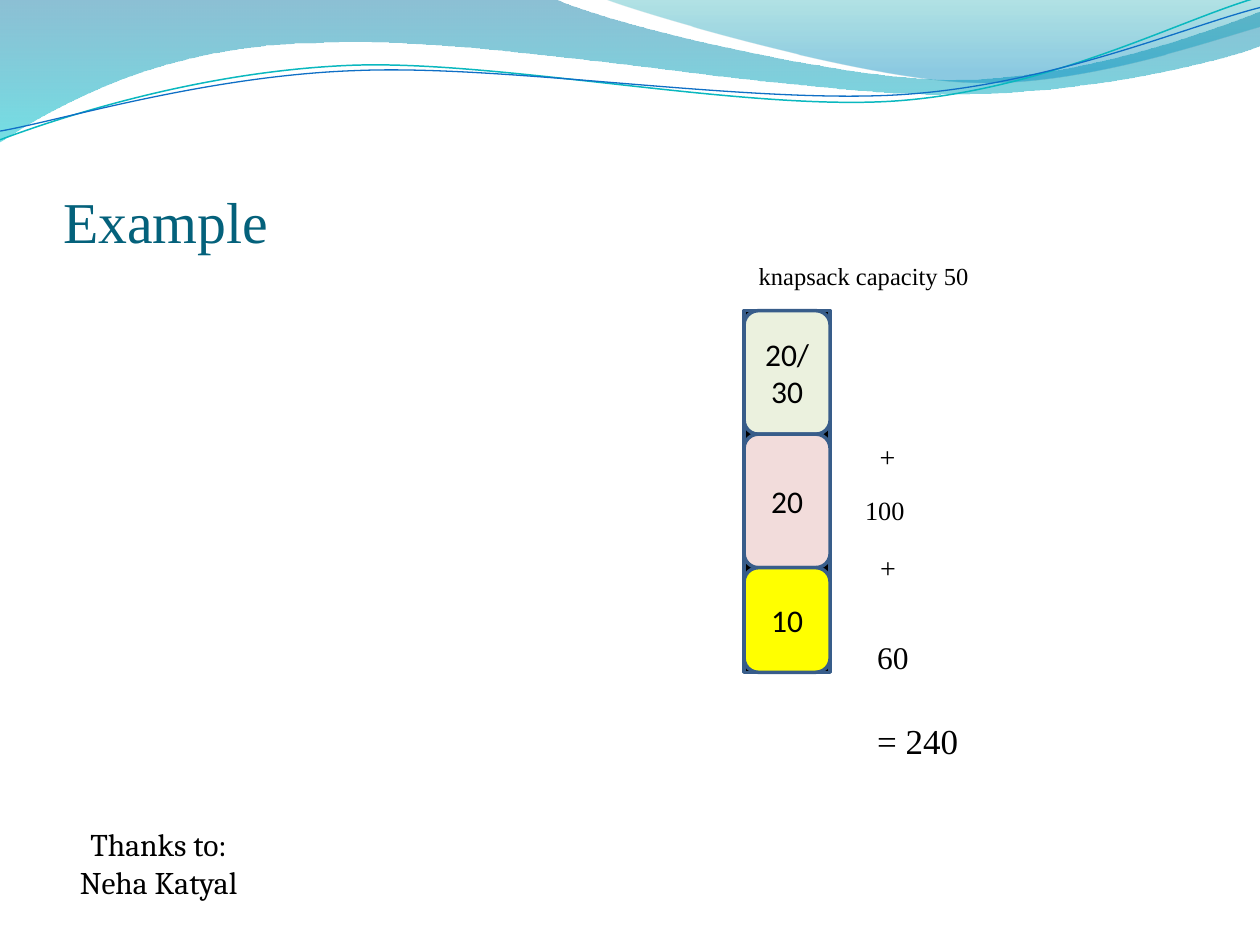
"""Build the fractional knapsack example slide."""
from dataclasses import dataclass

from lxml.etree import SubElement
from pptx import Presentation
from pptx.dml.color import RGBColor
from pptx.enum.shapes import MSO_SHAPE
from pptx.enum.text import MSO_ANCHOR, PP_ALIGN
from pptx.oxml.ns import qn
from pptx.util import Pt


@dataclass(frozen=True)
class Theme:
    title: RGBColor = RGBColor.from_string("04617B")
    ink: RGBColor = RGBColor.from_string("000000")
    outline: RGBColor = RGBColor.from_string("385D8A")
    third_item: RGBColor = RGBColor.from_string("EBF1DE")
    second_item: RGBColor = RGBColor.from_string("F2DCDB")
    first_item: RGBColor = RGBColor.from_string("FFFF00")
    teal_line: RGBColor = RGBColor.from_string("0AB8BF")
    blue_line: RGBColor = RGBColor.from_string("0F6FC6")
    left_band: tuple = ((0, "0074A1", 45), (1, "00C6CF", 55))
    right_band: tuple = ((0, "00A1A9", 30), (0.8, "008BBF", 45))
    serif: str = "Times New Roman"
    sans: str = "Calibri"
    credit: str = "Cambria"
    title_size: int = 33
    item_size: int = 18
    heading_size: int = 14
    value_size: int = 15
    plus_size: int = 16
    sum_size: int = 20


theme = Theme()


def add_wave(shapes, start, segments, closed):
    """Draw line (2 numbers) and Bezier (6 numbers) segments as a freeform."""
    points = [(Pt(seg[i]), Pt(seg[i + 1]))
              for seg in segments for i in range(0, len(seg), 2)]
    builder = shapes.build_freeform(Pt(start[0]), Pt(start[1]))
    builder.add_line_segments(points, close=closed)
    sp = builder.convert_to_shape()
    sp.shadow.inherit = False
    steps = iter(list(sp.element.spPr.iter(qn("a:lnTo"))))
    for seg in segments:
        step = next(steps)
        if len(seg) == 6:
            step.tag = qn("a:cubicBezTo")
            for _ in range(2):
                extra = next(steps)
                step.append(extra[0])
                extra.getparent().remove(extra)
    return sp


def set_text(sp, text, size, font, align, inset=0):
    """Fill a shape's text frame with evenly styled paragraphs."""
    tf = sp.text_frame
    tf.word_wrap = True
    tf.margin_left = tf.margin_right = Pt(inset)
    tf.margin_top = tf.margin_bottom = Pt(inset / 2)
    tf.text = text
    for p in tf.paragraphs:
        p.alignment = align
        p.font.size = Pt(size)
        p.font.name = font
        p.font.color.rgb = theme.ink
    return tf


prs = Presentation()
prs.slide_width, prs.slide_height = Pt(720), Pt(540)
s = prs.slides.add_slide(prs.slide_layouts[5])

bands = [
    ((0, -0.7), [(316.8, -0.7),
                 (342.7, 12.2, 478.1, 45.4, 545.8, 45.4),
                 (614.2, 45.4, 689.8, 18.7, 720, 6.5),
                 (720.7, 25.9),
                 (707.8, 31.7, 626.4, 54.7, 537.1, 54),
                 (447.8, 54, 275, 20.2, 185, 24.5),
                 (92.9, 25.2, 33.1, 59.8, -0.7, 81.4)], theme.left_band),
    ((344.9, -0.7), [(366.5, 7.9, 491, 44.6, 553.7, 46.8),
                     (616.3, 49.7, 691.9, 23, 720, 15.1),
                     (720, 0)], theme.right_band),
]
for start, segments, stops in bands:
    sp = add_wave(s.shapes, start, segments, True)
    sp.line.fill.background()
    sp.fill.gradient()
    sp.fill.gradient_angle = 270
    for stop, (position, color, _) in zip(sp.fill.gradient_stops, stops):
        stop.position = position
        stop.color.rgb = RGBColor.from_string(color)
    for clr, (_, _, opacity) in zip(sp.element.spPr.iter(qn("a:srgbClr")), stops):
        SubElement(clr, qn("a:alpha"), val=str(opacity * 1000))

strands = [
    ((0, 79.9), [(34.6, 67, 113.8, 41, 199.4, 37.4),
                 (284.4, 33.8, 427, 64.1, 513.4, 57.6),
                 (599.8, 51.1, 675.4, 10.8, 718.6, -1.4)], theme.teal_line, 0.85),
    ((0, 74.9), [(33.8, 69.1, 118.1, 43.2, 203.8, 40.3),
                 (290.2, 36.7, 429.8, 59.8, 516.2, 54),
                 (601.9, 48.2, 677.5, 15.1, 720, 4.3)], theme.blue_line, 0.75),
]
for start, segments, color, width in strands:
    sp = add_wave(s.shapes, start, segments, False)
    sp.fill.background()
    sp.line.color.rgb = color
    sp.line.width = Pt(width)

title = s.shapes.title
title.left, title.top, title.width, title.height = Pt(36), Pt(55.9), Pt(648), Pt(90)
tf = set_text(title, "Example", theme.title_size, theme.serif, PP_ALIGN.LEFT)
tf.vertical_anchor = MSO_ANCHOR.BOTTOM
tf.paragraphs[0].font.color.rgb = theme.title

rows = [
    ("knapsack capacity 50", 373, 0, theme.heading_size),
    ("+", 442.2, 84.9, theme.plus_size),
    ("100", 433.8, 12.3, theme.value_size),
    ("+", 442.5, 13.9, theme.plus_size),
    ("60", 440.7, 31.3, theme.item_size),
    ("= 240", 440.7, 24.9, theme.sum_size),
]
body = s.shapes.add_textbox(Pt(60.5), Pt(126.7), Pt(642.2), Pt(356.4))
tf = set_text(body, "\n".join(row[0] for row in rows), theme.value_size,
              theme.serif, PP_ALIGN.LEFT)
tf.margin_top = Pt(22.5)
for p, (_, indent, gap, size) in zip(tf.paragraphs, rows):
    p.font.size = Pt(size)
    p.space_before = Pt(gap)
    p._p.get_or_add_pPr().set("marL", str(Pt(indent)))

left, top, width = 425.2, 177.5, 49.2
items = [
    ("20/30", 70.6, theme.third_item),
    ("20", 76.3, theme.second_item),
    ("10", 59.8, theme.first_item),
]
total = sum(height for _, height, _ in items)
blocks = [(MSO_SHAPE.RECTANGLE, "", top, total, theme.ink)]
for text, height, color in items:
    blocks.append((MSO_SHAPE.ROUNDED_RECTANGLE, text, top, height, color))
    top += height
for kind, text, y, height, color in blocks:
    sp = s.shapes.add_shape(kind, Pt(left), Pt(y), Pt(width), Pt(height))
    sp.shadow.inherit = False
    sp.fill.solid()
    sp.fill.fore_color.rgb = color
    sp.line.color.rgb = theme.outline
    sp.line.width = Pt(2)
    if text:
        tf = set_text(sp, text, theme.item_size, theme.sans, PP_ALIGN.CENTER, 7.2)
        tf.vertical_anchor = MSO_ANCHOR.MIDDLE

sp = s.shapes.add_textbox(Pt(28), Pt(471.6), Pt(125.3), Pt(42.5))
set_text(sp, "Thanks to:\nNeha Katyal", theme.item_size, theme.credit, PP_ALIGN.CENTER)

prs.save("out.pptx")
